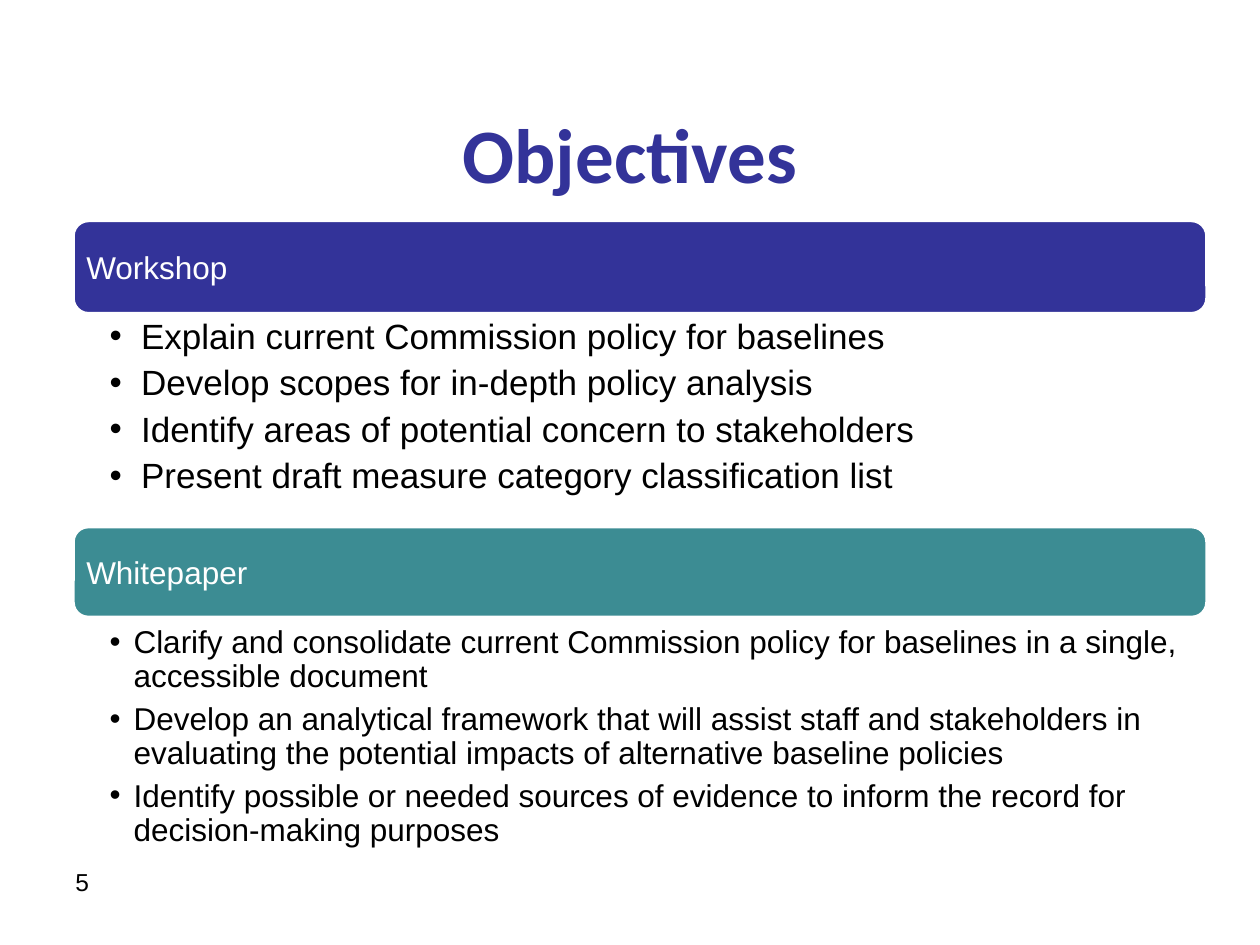
from dataclasses import dataclass

from lxml import etree
from pptx import Presentation
from pptx.dml.color import RGBColor as Rgb
from pptx.enum.shapes import MSO_SHAPE as Shape
from pptx.enum.text import MSO_ANCHOR as Anchor, PP_ALIGN as Align
from pptx.oxml.ns import qn
from pptx.util import Inches, Pt


@dataclass(frozen=True)
class Theme:
    blue: Rgb = Rgb(0x33, 0x33, 0x99)
    teal: Rgb = Rgb(0x3C, 0x8C, 0x93)
    white: Rgb = Rgb(0xFF, 0xFF, 0xFF)
    black: Rgb = Rgb(0, 0, 0)
    head: str = "Calibri"
    body: str = "Arial"
    title: int = 44
    large: int = 20
    label: int = 18
    small: int = 14


THEME = Theme()
LEFT, WIDTH = 0.58, 9

WORKSHOP = [
    "Explain current Commission policy for baselines",
    "Develop scopes for in-depth policy analysis",
    "Identify areas of potential concern to stakeholders",
    "Present draft measure category classification list",
]
PAPER = [
    "Clarify and consolidate current Commission policy for baselines "
    "in a single, accessible document",
    "Develop an analytical framework that will assist staff and stakeholders "
    "in evaluating the potential impacts of alternative baseline policies",
    "Identify possible or needed sources of evidence to inform the record "
    "for decision-making purposes",
]


def add_run(para, text, size, color, face=THEME.body, bold=False):
    run = para.add_run()
    run.text = text
    font = run.font
    font.name, font.size, font.bold = face, Pt(size), bold
    font.color.rgb = color


def set_margins(frame, left, top, right, bottom):
    frame.margin_left, frame.margin_top = Inches(left), Inches(top)
    frame.margin_right, frame.margin_bottom = Inches(right), Inches(bottom)


def place(shape, left, top, width, height):
    shape.left, shape.top = Inches(left), Inches(top)
    shape.width, shape.height = Inches(width), Inches(height)


def add_title(slide, text):
    title = slide.shapes.title
    place(title, 0.5, 0.67, 9, 1.08)
    frame = title.text_frame
    frame.vertical_anchor = Anchor.MIDDLE
    para = frame.paragraphs[0]
    para.alignment = Align.CENTER
    add_run(para, text, THEME.title, THEME.blue, THEME.head, True)


def add_box(slide, left, top, width, height):
    box = slide.shapes.add_textbox(
        Inches(left), Inches(top), Inches(width), Inches(height))
    box.text_frame.word_wrap = True
    return box.text_frame


def add_bar(slide, text, top, height, color):
    bar = slide.shapes.add_shape(
        Shape.ROUNDED_RECTANGLE,
        Inches(LEFT), Inches(top), Inches(WIDTH), Inches(height))
    bar.shadow.inherit = False
    bar.fill.solid()
    bar.fill.fore_color.rgb = color
    bar.line.color.rgb = THEME.white
    bar.line.width = Pt(2)
    frame = bar.text_frame
    frame.vertical_anchor = Anchor.MIDDLE
    set_margins(frame, 0.07, 0.07, 0.07, 0.07)
    para = frame.paragraphs[0]
    para.alignment = Align.LEFT
    add_run(para, text, THEME.label, THEME.white)


def set_bullet(para, indent):
    props = para._p.get_or_add_pPr()
    props.set("marL", str(Inches(indent)))
    props.set("indent", str(-Inches(indent)))
    etree.SubElement(props, qn("a:buFont")).set("typeface", THEME.body)
    etree.SubElement(props, qn("a:buChar")).set("char", "•")


def add_list(slide, items, top, size, indent, right):
    frame = add_box(slide, LEFT, top, WIDTH, 1.72)
    set_margins(frame, 0.29, 0.03, right, 0.03)
    for i, item in enumerate(items):
        para = frame.add_paragraph() if i else frame.paragraphs[0]
        set_bullet(para, indent)
        para.line_spacing = 0.9
        para.space_after = Pt(5)
        add_run(para, item, size, THEME.black)


def add_number(slide, text):
    frame = add_box(slide, 0.5, 6.83, 1.83, 0.52)
    add_run(frame.paragraphs[0], text, THEME.small, THEME.black)


def main():
    deck = Presentation()
    deck.slide_width, deck.slide_height = Inches(10), Inches(7.5)
    slide = deck.slides.add_slide(deck.slide_layouts[5])
    add_title(slide, "Objectives")
    add_number(slide, "5")
    add_bar(slide, "Workshop", 1.75, 0.74, THEME.blue)
    add_list(slide, WORKSHOP, 2.5, THEME.large, 0.25, 0.16)
    add_bar(slide, "Whitepaper", 4.18, 0.72, THEME.teal)
    add_list(slide, PAPER, 4.94, THEME.label, 0.19, 0.14)
    deck.save("out.pptx")


if __name__ == "__main__":
    main()
